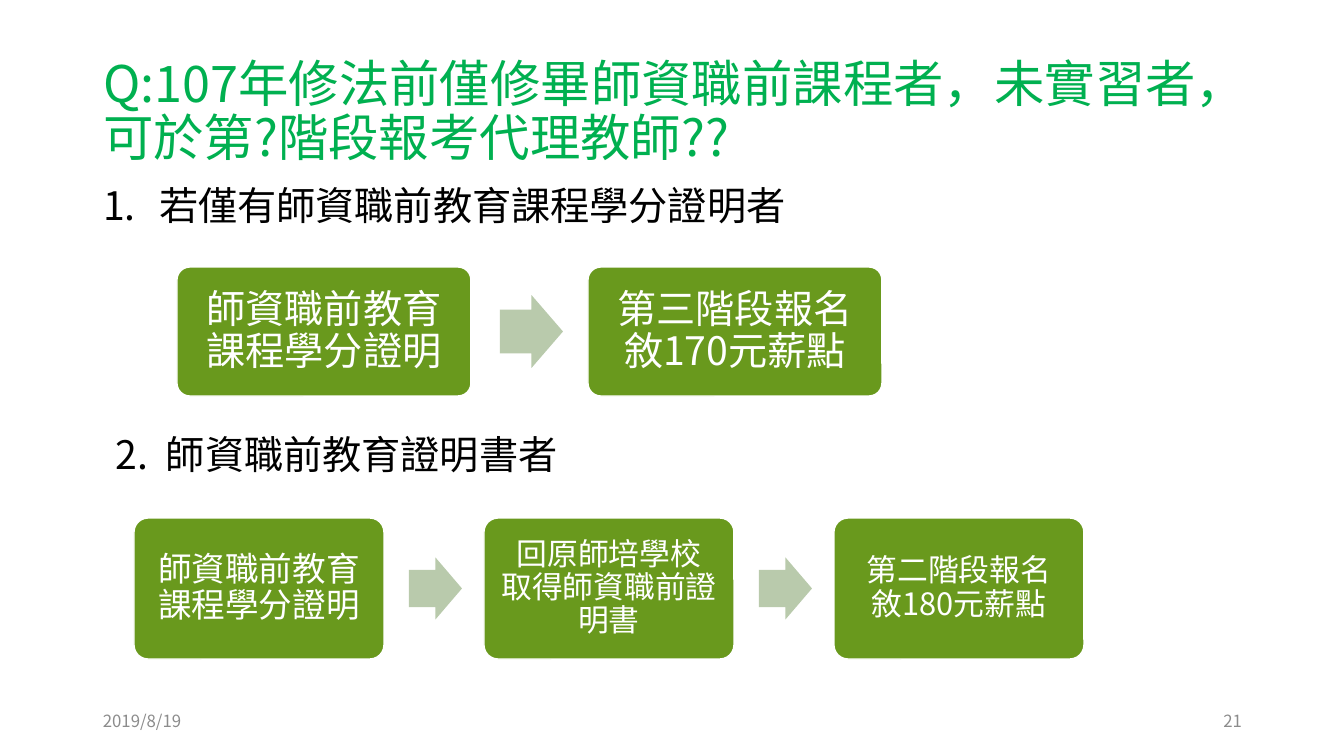
from lxml.etree import SubElement
from pptx import Presentation
from pptx.dml.color import RGBColor
from pptx.enum.shapes import MSO_SHAPE as Shape
from pptx.enum.text import MSO_ANCHOR as Anchor, MSO_AUTO_SIZE as AutoSize, PP_ALIGN as Align
from pptx.oxml.ns import qn
from pptx.util import Pt

EMU_PER_PX = 914400 / 100.8
TITLE_GREEN = RGBColor(0x00, 0xB0, 0x50)
BOX_GREEN = RGBColor(0x69, 0x99, 0x1D)
ARROW_GREEN = RGBColor(0xB9, 0xCA, 0xAC)
GREY = RGBColor(0x8C, 0x8C, 0x8C)
BLACK = RGBColor(0, 0, 0)
WHITE = RGBColor(255, 255, 255)
HEADING_FONT = "Noto Sans CJK JP"
TEXT_FONT = "Noto Sans CJK SC"


def px(length):
    return round(length * EMU_PER_PX)


def place(shape, left, top, width, height):
    shape.left, shape.top = px(left), px(top)
    shape.width, shape.height = px(width), px(height)


def write(shape, text, size, color, font=TEXT_FONT, align=Align.LEFT,
          anchor=Anchor.MIDDLE, spacing=1.0, number=None, indent=0):
    """Fill a shape with one formatted paragraph, numbered if asked."""
    frame = shape.text_frame
    frame.word_wrap = True
    frame.auto_size = AutoSize.NONE
    frame.vertical_anchor = anchor
    paragraph = frame.paragraphs[0]
    paragraph.text = text
    paragraph.alignment = align
    paragraph.line_spacing = spacing
    paragraph.space_before = Pt(0)
    properties = paragraph._p.get_or_add_pPr()
    if number:
        properties.set("marL", str(px(indent)))
        properties.set("indent", str(-px(indent)))
        SubElement(properties, qn("a:buFont"), typeface=font)
        SubElement(properties, qn("a:buAutoNum"), type="arabicPeriod", startAt=str(number))
    paragraph.font.name = font
    paragraph.font.size = Pt(size)
    paragraph.font.color.rgb = color
    # East Asian characters need their own typeface entry
    SubElement(properties.find(qn("a:defRPr")), qn("a:ea"), typeface=font)


def add_text(slide, left, top, width, height, text, size, color, **options):
    box = slide.shapes.add_textbox(px(left), px(top), px(width), px(height))
    write(box, text, size, color, **options)


def add_block(slide, kind, left, top, width, height, fill, adjustments):
    shape = slide.shapes.add_shape(kind, px(left), px(top), px(width), px(height))
    shape.shadow.inherit = False
    shape.fill.solid()
    shape.fill.fore_color.rgb = fill
    shape.line.fill.background()
    for index, value in enumerate(adjustments):
        shape.adjustments[index] = value
    return shape


def add_flow(slide, left, top, box_size, arrow_size, step, arrow_offset, inset, steps):
    """Draw a row of rounded boxes with an arrow between neighbours."""
    width, height = box_size
    arrow_width, arrow_height = arrow_size
    for index, (text, size) in enumerate(steps):
        x = left + index * step
        if index:
            add_block(slide, Shape.RIGHT_ARROW, x - step + arrow_offset,
                      top + (height - arrow_height) / 2, arrow_width, arrow_height,
                      ARROW_GREEN, (0.6, 0.5))
        box = add_block(slide, Shape.ROUNDED_RECTANGLE, x, top, width, height,
                        BOX_GREEN, (0.1,))
        box.line.color.rgb = WHITE
        box.line.width = Pt(1)
        frame = box.text_frame
        frame.margin_left = frame.margin_right = px(inset)
        frame.margin_top = frame.margin_bottom = px(inset)
        write(box, text, size, WHITE, align=Align.CENTER, spacing=0.9)


def main():
    presentation = Presentation()
    presentation.slide_width, presentation.slide_height = px(1344), px(756)
    slide = presentation.slides.add_slide(presentation.slide_layouts[1])

    # Title and first numbered heading
    title, body = slide.placeholders
    place(title, 93, 40, 1159, 146)
    write(title, "Q:107年修法前僅修畢師資職前課程者，未實習者，可於第?階段報考代理教師??",
          36, TITLE_GREEN, font=HEADING_FONT, spacing=0.9)
    place(body, 93, 185, 1159, 52)
    write(body, "若僅有師資職前教育課程學分證明者", 28, BLACK, font=HEADING_FONT,
          anchor=Anchor.TOP, spacing=0.8, number=1, indent=56)

    # Third-stage route
    certificate = "師資職前教育課程學分證明"
    add_flow(slide, 177, 267, (294, 129), (63, 73), 411, 323, 15,
             [(certificate, 28), ("第三階段報名\v敘170元薪點", 28)])

    # Second numbered heading and second-stage route
    add_text(slide, 106, 425, 994, 57, "師資職前教育證明書者", 28, BLACK,
             font=HEADING_FONT, anchor=Anchor.TOP, number=2, indent=50)
    add_flow(slide, 134, 518, (250, 141), (53, 62), 350, 275, 13,
             [(certificate, 24), ("回原師培學校\v取得師資職前證明書", 22),
              ("第二階段報名\v敘180元薪點", 22)])

    # Date and slide number
    add_text(slide, 93, 701, 302, 40, "2019/8/19", 12, GREY)
    add_text(slide, 950, 701, 302, 40, "21", 12, GREY, align=Align.RIGHT)

    presentation.save("out.pptx")


if __name__ == "__main__":
    main()
